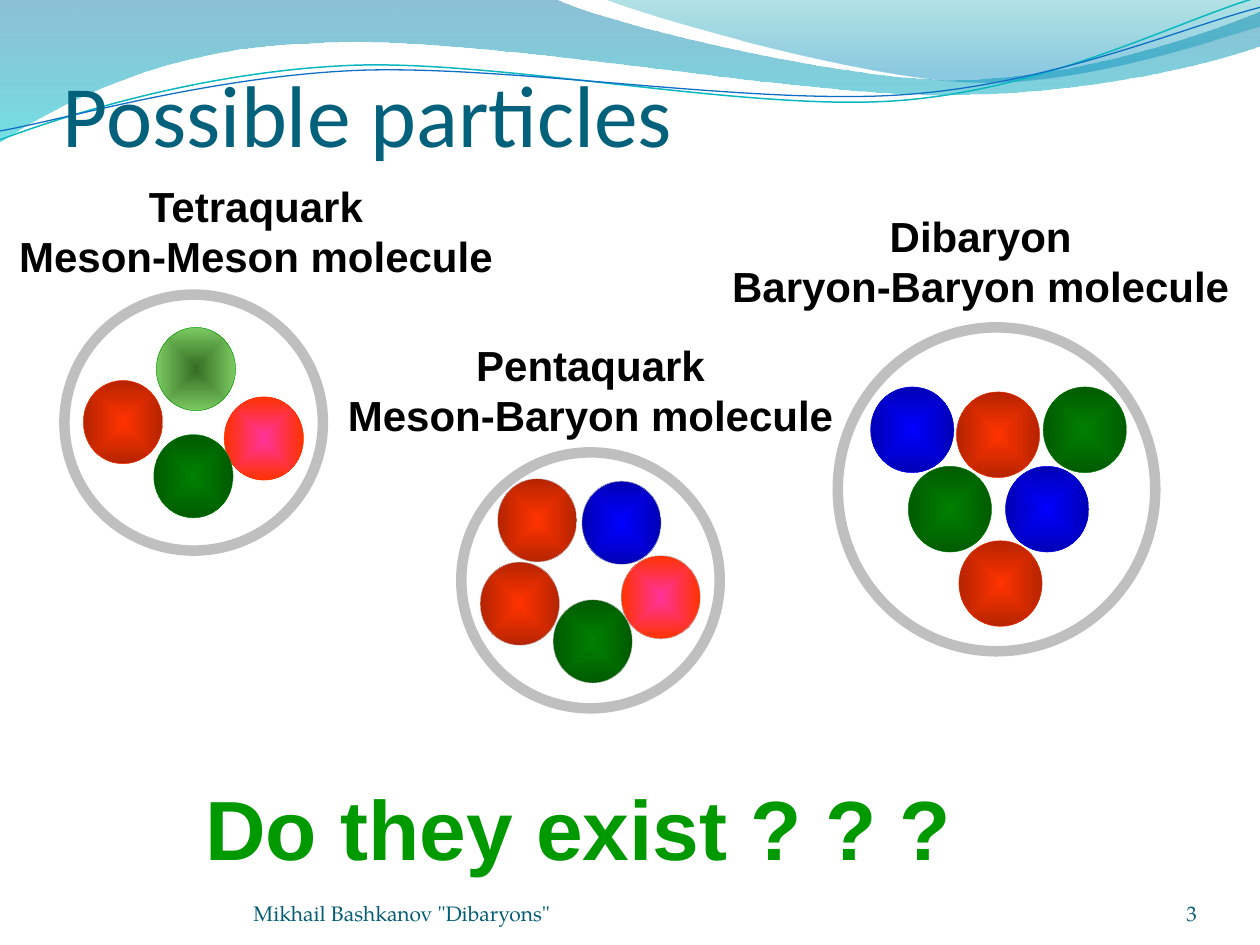
from lxml import etree
from pptx import Presentation
from pptx.dml.color import RGBColor
from pptx.enum.shapes import MSO_SHAPE as Kind
from pptx.enum.text import MSO_ANCHOR as Anchor, PP_ALIGN as Align
from pptx.oxml import parse_xml
from pptx.oxml.ns import nsdecls, qn
from pptx.util import Cm, Pt

rgb = RGBColor.from_string


def shade(shape, stops, way):
    """Fill with a gradient; a stop is (percent, colour, tag, percent of tag)."""
    marks = "".join(
        f'<a:gs pos="{at * 1000}"><a:srgbClr val="{hue}">'
        f'<a:{tag} val="{part * 1000}"/></a:srgbClr></a:gs>'
        for at, hue, tag, part in stops)
    shape.fill.background()
    props = shape._element.spPr
    props.replace(props.find(qn("a:noFill")), parse_xml(
        f'<a:gradFill {nsdecls("a")} rotWithShape="1">'
        f'<a:gsLst>{marks}</a:gsLst>{way}</a:gradFill>'))


def write(text, box, font, size, hue, bold=False, align=Align.LEFT,
          low=False, pad=None):
    """Add a text box; low text sits at the bottom and wraps."""
    frame = slide.shapes.add_textbox(*map(Cm, box)).text_frame
    frame.text = text
    frame.word_wrap = low
    frame.vertical_anchor = Anchor.BOTTOM if low else Anchor.TOP
    if pad is not None:
        frame.margin_left = frame.margin_right = frame.margin_bottom = 0
        frame.margin_top = Cm(pad)
    for para in frame.paragraphs:
        para.alignment = align
        for run in para.runs:
            run.font.name, run.font.size, run.font.bold = font, Pt(size), bold
            run.font.color.rgb = rgb(hue)


deck = Presentation()
deck.slide_width, deck.slide_height = Cm(25.4), Cm(19.05)
slide = deck.slides.add_slide(deck.slide_layouts[6])

# Waves: a start, then three points for each curve; a straight edge
# repeats its end point three times.
DOWN = '<a:lin ang="5400000" scaled="0"/>'
waves = [
    ([(0, 0)] + [(11.18, -0.03)] * 3
     + [(12.09, 0.43), (16.87, 1.6), (19.25, 1.6),
        (21.67, 1.6), (24.33, 0.66), (25.4, 0.23)]
     + [(25.43, 0.91)] * 3
     + [(24.97, 1.12), (22.1, 1.93), (18.95, 1.91),
        (15.8, 1.91), (9.7, 0.71), (6.53, 0.86),
        (3.28, 0.91), (1.17, 2.11), (-0.03, 2.87)],
     [(0, "0074A1", "alpha", 45), (100, "00C6CF", "alpha", 55)], None),
    ([(12.17, -0.03), (12.93, 0.3), (17.32, 1.57), (19.53, 1.65),
      (21.74, 1.75), (24.41, 0.81), (25.4, 0.53)] + [(25.4, 0)] * 3,
     [(0, "00A1A9", "alpha", 30), (80, "008BBF", "alpha", 45)], None),
    ([(0, 2.82), (1.22, 2.36), (4.01, 1.45), (7.04, 1.32),
      (10.03, 1.19), (15.06, 2.26), (18.11, 2.03),
      (21.16, 1.8), (23.83, 0.38), (25.35, -0.05)],
     None, ("0AB8BF", 0.85)),
    ([(0, 2.64), (1.19, 2.44), (4.17, 1.55), (7.19, 1.42),
      (10.24, 1.3), (15.16, 2.13), (18.21, 1.91),
      (21.23, 1.7), (23.9, 0.53), (25.4, 0.15)],
     None, ("0F6FC6", 0.75)),
]
for dots, stops, pen in waves:
    dots = [(Cm(x), Cm(y)) for x, y in dots]
    form = slide.shapes.build_freeform(*dots[0])
    form.add_line_segments(dots[1:], close=bool(stops))
    wave = form.convert_to_shape()
    wave.shadow.inherit = False
    edges = wave._element.xpath(".//a:lnTo")
    for i in range(0, len(edges), 3):
        curve = etree.Element(qn("a:cubicBezTo"))
        edges[i].addprevious(curve)
        for edge in edges[i:i + 3]:
            curve.append(edge[0])
            edge.getparent().remove(edge)
    if stops:
        shade(wave, stops, DOWN)
        wave.line.fill.background()
    else:
        wave.fill.background()
        wave.line.color.rgb = rgb(pen[0])
        wave.line.width = Pt(pen[1])

write("Possible particles", (1.27, 0.76, 22.86, 2.57), "Calibri", 50, "04617B",
      low=True, pad=0.13)

# Quarks: gradient from the centre to the rim, and the line colour
CORE = ('<a:path path="shape"><a:fillToRect l="50000" t="50000" '
        'r="50000" b="50000"/></a:path>')
GREY = "BFBFBF"
quarks = {name: ([(0, hue, "shade", 100), (100, hue, "shade", 46)], hue)
          for name, hue in
          [("red", "FF3300"), ("green", "008000"), ("blue", "0000FF")]}
quarks["pink"] = ([(0, "FF3399", "shade", 100),
                   (100, "FF3300", "shade", 100)], "FF3300")
quarks["lime"] = ([(0, "387026", "shade", 100),
                   (100, "7CCA62", "shade", 100)], "009900")

# Label, its box, ring box, quark size, rim colour for all, quark places
groups = [
    ("Pentaquark\nMeson-Baryon molecule", (6.71, 6.71, 10.39, 2.31),
     (9.3, 9.12, 5.21, 5.16), (1.6, 1.68), GREY,
     [("red", 9.68, 11.33), ("pink", 12.52, 11.2), ("green", 11.15, 12.09),
      ("blue", 11.73, 9.7), ("red", 10.03, 9.65)]),
    ("Dibaryon\nBaryon-Baryon molecule", (14.45, 4.11, 10.64, 2.31),
     (16.89, 6.6, 6.4, 6.53), (1.68, 1.73), None,
     [("red", 19.28, 7.9), ("green", 18.31, 9.4), ("blue", 20.27, 9.4),
      ("red", 19.33, 10.9), ("blue", 17.55, 7.8), ("green", 21.03, 7.8)]),
    ("Tetraquark\nMeson-Meson molecule", (0.08, 3.51, 10.16, 2.31),
     (1.3, 5.94, 5.21, 5.16), (1.6, 1.68), None,
     [("red", 1.68, 7.67), ("pink", 4.52, 8), ("green", 3.1, 8.76),
      ("lime", 3.15, 6.6)]),
]
for label, box, bound, size, rim, balls in groups:
    write(label, box, "Arial", 24, "000000", bold=True, align=Align.CENTER)
    ring = slide.shapes.add_shape(Kind.OVAL, *map(Cm, bound))
    ring.shadow.inherit = False
    ring.fill.background()
    ring.line.color.rgb = rgb(GREY)
    ring.line.width = Pt(6)
    for name, x, y in balls:
        stops, hue = quarks[name]
        ball = slide.shapes.add_shape(Kind.OVAL, *map(Cm, (x, y, *size)))
        ball.shadow.inherit = False
        shade(ball, stops, CORE)
        ball.line.color.rgb = rgb(rim or hue)
        ball.line.width = Pt(0.25)

write("Do they exist ? ? ?", (3.89, 15.52, 15.6, 2.29), "Arial", 48, "009900",
      bold=True)
for text, x, wide, align in [
        ('Mikhail Bashkanov "Dibaryons"', 5.11, 11.63, Align.LEFT),
        ("3", 22.02, 2.11, Align.RIGHT)]:
    write(text, (x, 17.65, wide, 1.02), "TeX Gyre Pagella", 12, "045D75",
          align=align, low=True, pad=0)

deck.save("out.pptx")
